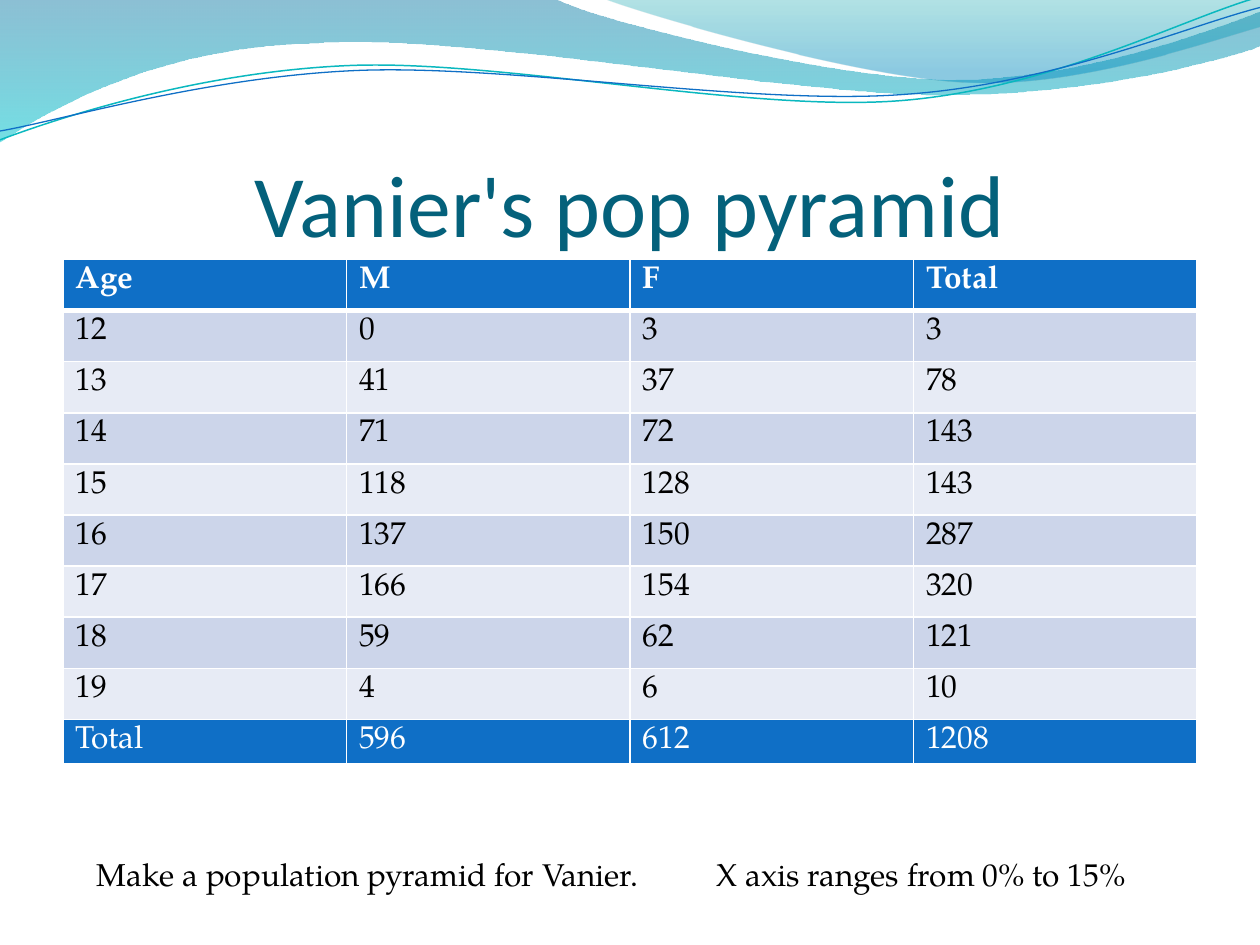
from math import cos, radians, sin

from lxml.etree import SubElement
from pptx import Presentation
from pptx.dml.color import RGBColor
from pptx.enum.text import MSO_ANCHOR, PP_ALIGN
from pptx.oxml import parse_xml
from pptx.oxml.ns import nsdecls, qn
from pptx.util import Inches, Pt

COLORS = {
    "white": "FFFFFF", "text": "000000", "title": "04617B", "header": "0F6FC6",
    "band_dark": "CCD5EA", "band_light": "E7EBF5",
    "wave_blue": "0074A1", "wave_cyan": "00C6CF",
    "wave_teal": "00A1A9", "wave_sky": "008BBF", "line_teal": "0AB8BF",
}
BODY_FONT = "TeX Gyre Pagella"
CURVE_TILT = -2.7

# Each outline is a list of steps: two numbers for a line, six for a curve
LEFT_WAVE = [
    (0, 0), (4.4, -0.01),
    (4.76, 0.17, 6.64, 0.63, 7.58, 0.63), (8.53, 0.63, 9.58, 0.26, 10, 0.09),
    (10.01, 0.36),
    (9.83, 0.44, 8.7, 0.76, 7.46, 0.75), (6.22, 0.75, 3.82, 0.28, 2.57, 0.34),
    (1.29, 0.36, 0.46, 0.83, -0.01, 1.13), (0, 0),
]
RIGHT_WAVE = [
    (4.79, -0.01),
    (5.09, 0.11, 6.82, 0.62, 7.69, 0.65), (8.56, 0.69, 9.61, 0.32, 10, 0.21),
    (10, 0), (4.79, -0.01),
]
TEAL_CURVE = [
    (0, 1.11),
    (0.48, 0.93, 1.58, 0.57, 2.77, 0.52), (3.95, 0.47, 5.93, 0.89, 7.13, 0.8),
    (8.33, 0.71, 9.38, 0.15, 9.98, -0.02),
]
BLUE_CURVE = [
    (0, 1.04),
    (0.47, 0.96, 1.64, 0.61, 2.83, 0.56), (4.03, 0.51, 5.97, 0.84, 7.17, 0.75),
    (8.36, 0.67, 9.41, 0.21, 10, 0.06),
]
POPULATION = [
    ("Age", "M", "F", "Total"),
    ("12", "0", "3", "3"),
    ("13", "41", "37", "78"),
    ("14", "71", "72", "143"),
    ("15", "118", "128", "143"),
    ("16", "137", "150", "287"),
    ("17", "166", "154", "320"),
    ("18", "59", "62", "121"),
    ("19", "4", "6", "10"),
    ("Total", "596", "612", "1208"),
]


def color(name):
    return RGBColor.from_string(COLORS[name])


def add_span(para, text, size, font, color_name, bold=False):
    span = para.add_run()
    span.text = text
    span.font.size = Pt(size)
    span.font.name = font
    span.font.bold = bold
    span.font.color.rgb = color(color_name)


def turn(point, center, degrees):
    """Turn a point clockwise around a center."""
    dx, dy = point[0] - center[0], point[1] - center[1]
    c, s = cos(radians(degrees)), sin(radians(degrees))
    return center[0] + dx * c - dy * s, center[1] + dx * s + dy * c


def add_outline(page, steps, left, top, close, center=(0, 0), tilt=0):
    """Draw a path, joining each three points of a curve step into a Bezier."""
    points = [(step[i], step[i + 1]) for step in steps
              for i in range(0, len(step), 2)]
    points = [turn(point, center, -tilt) for point in points]
    points = [(Inches(left + x), Inches(top + y)) for x, y in points]
    builder = page.shapes.build_freeform(*points[0])
    builder.add_line_segments(points[1:], close=close)
    shape = builder.convert_to_shape()
    lines = iter(list(shape.element.iter(qn("a:lnTo"))))
    for step in steps[1:]:
        line = next(lines)
        if len(step) == 6:
            curve = parse_xml(f'<a:cubicBezTo {nsdecls("a")}/>')
            line.addprevious(curve)
            for part in (line, next(lines), next(lines)):
                curve.append(part[0])
                part.getparent().remove(part)
    shape.rotation = tilt
    shape.shadow.inherit = False
    return shape


def add_wave(page, steps, left, top, stops):
    wave = add_outline(page, steps, left, top, close=True)
    wave.line.fill.background()
    wave.fill.gradient()
    wave.fill.gradient_angle = 270
    for stop, (position, name, _) in zip(wave.fill.gradient_stops, stops):
        stop.position = position
        stop.color.rgb = color(name)
    colors = list(wave.element.spPr.iter(qn("a:srgbClr")))
    for node, (_, _, opacity) in zip(colors, stops):
        SubElement(node, qn("a:alpha"), val=str(opacity * 1000))


def add_curve(page, steps, left, top, center, name, width):
    curve = add_outline(page, steps, left, top, False, center, CURVE_TILT)
    curve.fill.background()
    curve.line.color.rgb = color(name)
    curve.line.width = Pt(width)


def add_banner(page, left, top):
    add_wave(page, LEFT_WAVE, left, top,
             [(0, "wave_blue", 45), (1, "wave_cyan", 55)])
    add_wave(page, RIGHT_WAVE, left, top,
             [(0, "wave_teal", 30), (0.8, "wave_sky", 45)])
    add_curve(page, TEAL_CURVE, left, top, (4.99, 0.58), "line_teal", 0.85)
    add_curve(page, BLUE_CURVE, left, top, (5, 0.59), "header", 0.75)


def add_title(page, left, top, width, height):
    box = page.shapes.add_textbox(
        Inches(left), Inches(top), Inches(width), Inches(height))
    frame = box.text_frame
    frame.word_wrap = True
    frame.vertical_anchor = MSO_ANCHOR.BOTTOM
    frame.margin_left = frame.margin_right = frame.margin_bottom = 0
    para = frame.paragraphs[0]
    para.alignment = PP_ALIGN.CENTER
    add_span(para, "Vanier's pop pyramid", 50, "Calibri", "title")


def set_borders(cell, top, bottom):
    """White borders, which stand before the fill in the cell properties."""
    properties = cell._tc.get_or_add_tcPr()
    sides = [("lnL", 1), ("lnR", 1), ("lnT", top), ("lnB", bottom)]
    for index, (side, width) in enumerate(sides):
        properties.insert(index, parse_xml(
            f'<a:{side} {nsdecls("a")} w="{Pt(width)}"><a:solidFill>'
            f'<a:srgbClr val="{COLORS["white"]}"/></a:solidFill></a:{side}>'))


def add_population_table(page, left, top, width, height, last_height):
    last = len(POPULATION) - 1
    table = page.shapes.add_table(
        len(POPULATION), len(POPULATION[0]), Inches(left), Inches(top),
        Inches(width), Inches(height)).table
    for index, values in enumerate(POPULATION):
        table.rows[index].height = Inches(
            last_height if index == last else (height - last_height) / last)
        strong = index in (0, last)
        band = "band_dark" if index % 2 else "band_light"
        for column, value in enumerate(values):
            cell = table.cell(index, column)
            if index == last:
                cell.margin_bottom = 0
            cell.fill.solid()
            cell.fill.fore_color.rgb = color("header" if strong else band)
            set_borders(cell, top=3 if index == 1 else 1,
                        bottom=3 if index == 0 else 1)
            add_span(cell.text_frame.paragraphs[0], value, 18, BODY_FONT,
                     "white" if strong else "text", bold=index == 0)


def add_task(page, left, top, width, height):
    box = page.shapes.add_textbox(
        Inches(left), Inches(top), Inches(width), Inches(height))
    box.text_frame.word_wrap = True
    para = box.text_frame.paragraphs[0]
    # A tab stop sets the second sentence apart
    tabs = SubElement(para._p.get_or_add_pPr(), qn("a:tabLst"))
    SubElement(tabs, qn("a:tab"), pos=str(Inches(4.92)), algn="l")
    add_span(para, "Make a population pyramid for Vanier.\t"
             "X axis ranges from 0% to 15%", 18, BODY_FONT, "text")


def main():
    deck = Presentation()
    deck.slide_width, deck.slide_height = Inches(10), Inches(7.5)
    page = deck.slides.add_slide(deck.slide_layouts[6])
    page.background.fill.solid()
    page.background.fill.fore_color.rgb = color("white")
    add_banner(page, 0, 0)
    add_title(page, 0.5, 0.77, 9, 1.25)
    add_population_table(page, 0.5, 2.06, 9, 4, 0.35)
    add_task(page, 0.67, 6.74, 8.74, 0.4)
    deck.save("out.pptx")


if __name__ == "__main__":
    main()
